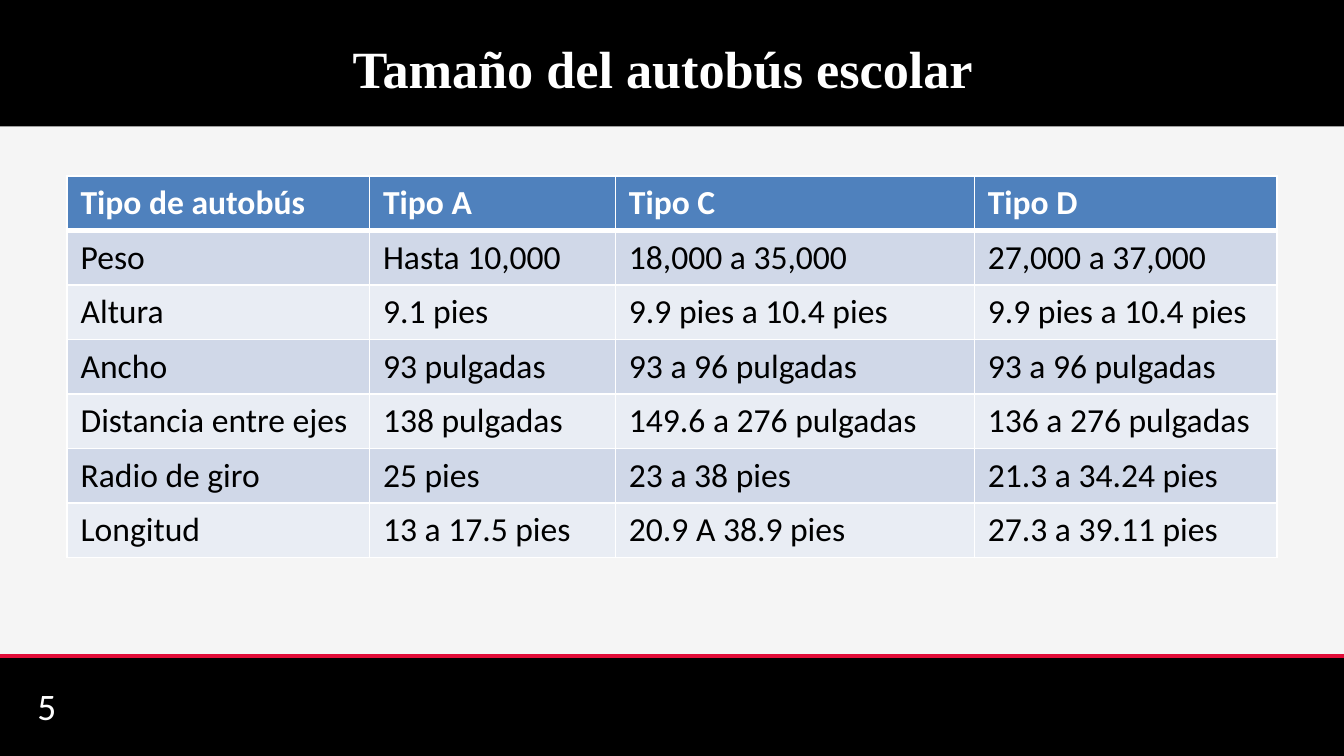
from dataclasses import dataclass

from lxml.etree import SubElement
from pptx import Presentation
from pptx.dml.color import RGBColor as Rgb
from pptx.enum.shapes import MSO_CONNECTOR as Conn, MSO_SHAPE as Shape
from pptx.enum.text import MSO_ANCHOR as Anchor, PP_ALIGN as Align
from pptx.oxml.ns import qn
from pptx.util import Inches, Pt


@dataclass(frozen=True)
class Theme:
    black: str = "000000"
    white: str = "FFFFFF"
    panel: str = "F5F5F5"
    red: str = "E20D38"
    head: str = "4F81BD"
    bands: tuple = ("D0D8E8", "E9EDF4")
    serif: str = "Times New Roman"
    sans: str = "Calibri"
    title: int = 28
    number: int = 20
    cell: int = 18


T = Theme()
WIDE = 10
HIGH = WIDE * 9 / 16
TOP, FOOT = 0.94, 4.88  # lower edge of the title band, upper edge of the footer

ROWS = [
    ("Tipo de autobús", "Tipo A", "Tipo C", "Tipo D"),
    ("Peso", "Hasta 10,000", "18,000 a 35,000", "27,000 a 37,000"),
    ("Altura", "9.1 pies", "9.9 pies a 10.4 pies", "9.9 pies a 10.4 pies"),
    ("Ancho", "93 pulgadas", "93 a 96 pulgadas", "93 a 96 pulgadas"),
    ("Distancia entre ejes", "138 pulgadas", "149.6 a 276 pulgadas",
     "136 a 276 pulgadas"),
    ("Radio de giro", "25 pies", "23 a 38 pies", "21.3 a 34.24 pies"),
    ("Longitud", "13 a 17.5 pies", "20.9 A 38.9 pies", "27.3 a 39.11 pies"),
]
COLS = (2.25, 1.83, 2.67, 2.25)  # relative column widths


def paint(part, color):
    part.fill.solid()
    part.fill.fore_color.rgb = Rgb.from_string(color)


def write(par, text, size, color, face, bold=False):
    run = par.add_run()
    run.text = text
    font = run.font
    font.size, font.name, font.bold = Pt(size), face, bold
    font.color.rgb = Rgb.from_string(color)


def block(slide, box, color):
    rect = slide.shapes.add_shape(Shape.RECTANGLE, *map(Inches, box))
    rect.shadow.inherit = False
    rect.line.fill.background()
    paint(rect, color)


def footer(slide, box, number):
    x, y, w, h = box
    block(slide, box, T.black)
    # Red rule along the upper edge
    rule = slide.shapes.add_connector(
        Conn.STRAIGHT, *map(Inches, (x, y, x + w, y)))
    rule.line.color.rgb = Rgb.from_string(T.red)
    rule.line.width = Pt(2)
    SubElement(rule._element.spPr, qn("a:effectLst"))
    # Slide number
    area = (x + 0.018 * w, y + 0.3 * h, 0.233 * w, 0.4 * h)
    frame = slide.shapes.add_textbox(*map(Inches, area)).text_frame
    frame.word_wrap = True
    frame.vertical_anchor = Anchor.MIDDLE
    write(frame.paragraphs[0], number, T.number, T.white, T.sans)


def heading(slide, box, text):
    title = slide.shapes.title
    slide.shapes._spTree.append(title._element)  # bring to the front
    title.left, title.top, title.width, title.height = map(Inches, box)
    paint(title, T.black)
    frame = title.text_frame
    frame.vertical_anchor = Anchor.MIDDLE
    frame.margin_top, frame.margin_bottom = Inches(0.11), Inches(0.05)
    frame.margin_left, frame.margin_right = Inches(0.1), Inches(0.24)
    par = frame.paragraphs[0]
    par.alignment = Align.CENTER
    write(par, text, T.title, T.white, T.serif, True)


def border(cell, high, low):
    props = cell._tc.get_or_add_tcPr()
    for side, width in (("L", 1), ("R", 1), ("T", high), ("B", low)):
        line = SubElement(props, qn(f"a:ln{side}"), w=str(Pt(width)))
        fill = SubElement(line, qn("a:solidFill"))
        SubElement(fill, qn("a:srgbClr"), val=T.white)


def grid(slide, box, rows):
    w, h = box[2:]
    table = slide.shapes.add_table(
        len(rows), len(COLS), *map(Inches, box)).table
    for col, part in zip(table.columns, COLS):
        col.width = Inches(w * part / sum(COLS))
    for r, row in enumerate(rows):
        table.rows[r].height = Inches(h / len(rows))
        top = r == 0
        for c, text in enumerate(row):
            cell = table.cell(r, c)
            # The rule is thick between the header and the first row
            border(cell, 3 if r == 1 else 1, 3 if top else 1)
            paint(cell, T.head if top else T.bands[(r - 1) % 2])
            write(cell.text_frame.paragraphs[0], text, T.cell,
                  T.white if top else T.black, T.sans, top)


def main():
    deck = Presentation()
    deck.slide_width, deck.slide_height = Inches(WIDE), Inches(HIGH)
    slide = deck.slides.add_slide(deck.slide_layouts[5])
    # Panel between the two bands
    block(slide, (0, 0, WIDE, FOOT), T.panel)
    footer(slide, (0, FOOT, WIDE, HIGH - FOOT), "5")
    heading(slide, (0, 0, WIDE, TOP), "Tamaño del autobús escolar")
    grid(slide, (0.05 * WIDE, 1.31, 0.9 * WIDE, 2.84), ROWS)
    deck.save("out.pptx")


if __name__ == "__main__":
    main()
